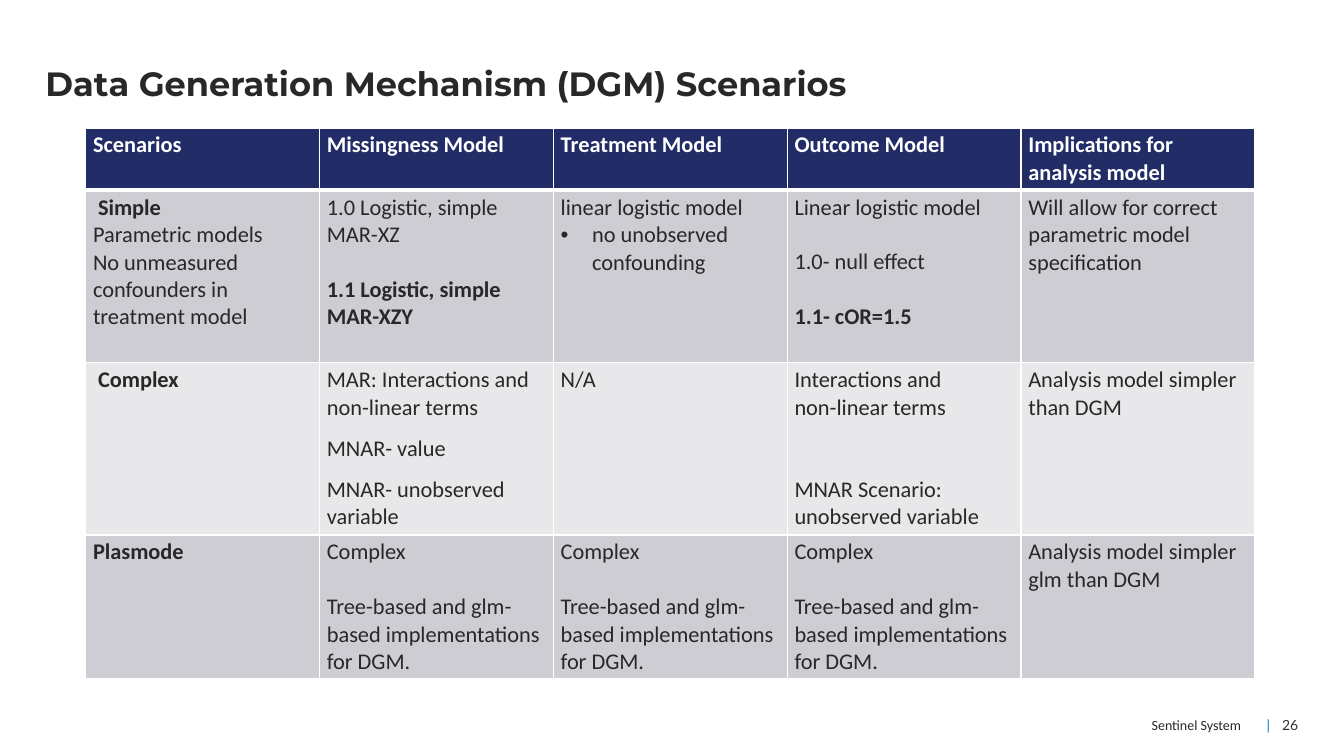
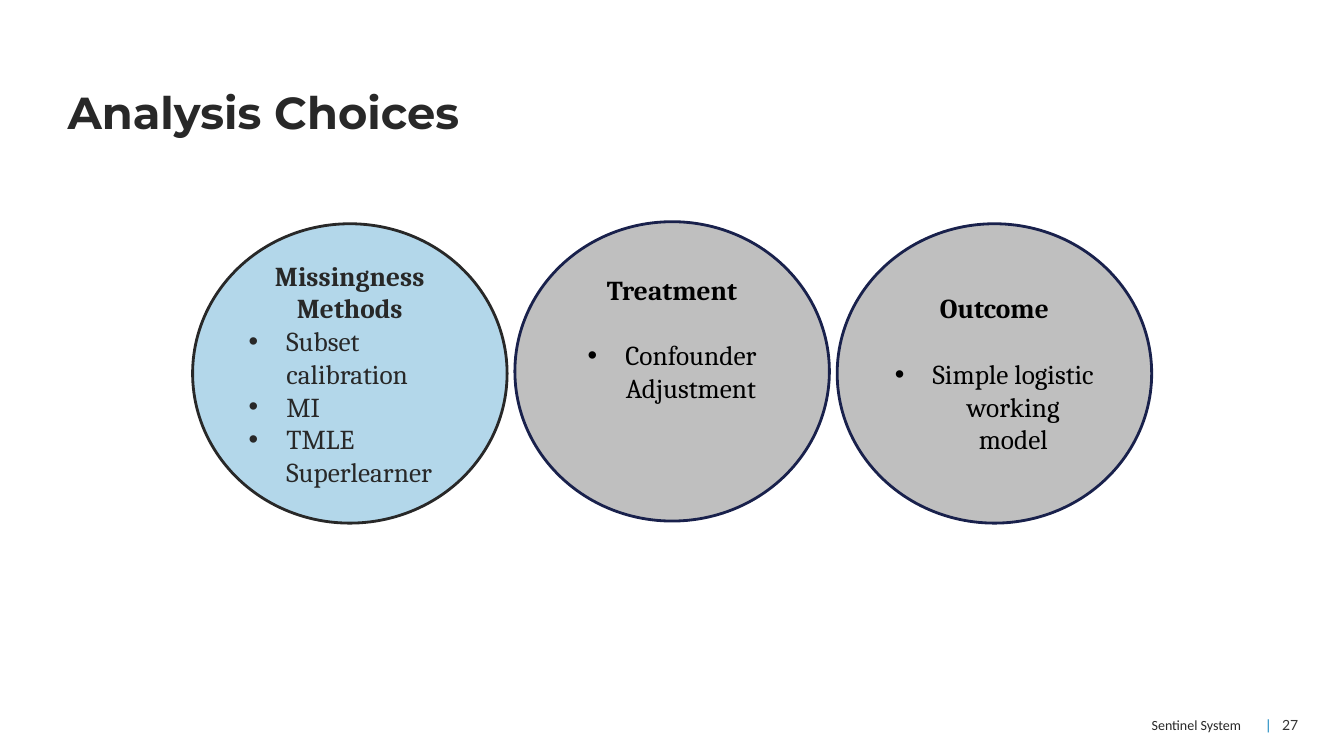
import dataclasses
import typing

import lxml.etree
import pptx
import pptx.dml.color
import pptx.enum.shapes
import pptx.enum.text
import pptx.oxml.ns
import pptx.slide
import pptx.text.text
import pptx.util

WIDTH, HEIGHT = pptx.util.Inches(13.333), pptx.util.Inches(7.5)
INK, WHITE, BLACK, NAVY = "282828", "FFFFFF", "000000", "222C67"
DARK_BAND, LIGHT_BAND = "CDCDD3", "E8E8EB"
ALIGN = pptx.enum.text.PP_ALIGN
ANCHOR = pptx.enum.text.MSO_ANCHOR
LINE_GAP, HALF_GAP = 19.5, 9.75
DISC_GAP = 23.4


class Box(typing.NamedTuple):
    """A frame in percent of the slide's width and height."""
    left: float
    top: float
    width: float
    height: float


class Type(typing.NamedTuple):
    font: str
    size: float
    colour: str


class Line(typing.NamedTuple):
    text: str
    bold: bool = False
    before: float = 0
    indent: float = 0
    align: typing.Optional[ALIGN] = None


@dataclasses.dataclass(frozen=True)
class Disc:
    fill: str
    outline: str
    ink: str
    top: float
    lines: list[Line]
    bottom_inset: float = 3.6


def across(percent: float) -> int:
    return pptx.util.Emu(round(WIDTH * percent / 100))


def down(percent: float) -> int:
    return pptx.util.Emu(round(HEIGHT * percent / 100))


def frame(box: Box) -> tuple[int, int, int, int]:
    return across(box.left), down(box.top), across(box.width), down(box.height)


def colour(value: str) -> pptx.dml.color.RGBColor:
    return pptx.dml.color.RGBColor.from_string(value)


def add_child(parent: lxml.etree._Element, tag: str, **attributes: str) -> lxml.etree._Element:
    return lxml.etree.SubElement(parent, pptx.oxml.ns.qn(tag), **attributes)


def add_run(paragraph: pptx.text.text._Paragraph, text: str, style: Type, bold: bool = False) -> None:
    run = paragraph.add_run()
    run.text = text
    run.font.name = style.font
    run.font.size = pptx.util.Pt(style.size)
    run.font.bold = bold
    run.font.color.rgb = colour(style.colour)


def add_bullet(paragraph: pptx.text.text._Paragraph, indent: float) -> None:
    properties = paragraph._p.get_or_add_pPr()
    distance = pptx.util.Pt(indent)
    properties.set("marL", str(distance))
    properties.set("indent", str(-distance))
    add_child(properties, "a:buFont", typeface="Arial")
    add_child(properties, "a:buChar", char="•")


def write_lines(text: pptx.text.text.TextFrame, lines: list[Line], style: Type) -> None:
    for index, line in enumerate(lines):
        paragraph = text.add_paragraph() if index else text.paragraphs[0]
        if line.indent:
            add_bullet(paragraph, line.indent)
        if line.before:
            paragraph.space_before = pptx.util.Pt(line.before)
        if line.align is not None:
            paragraph.alignment = line.align
        add_run(paragraph, line.text, style, line.bold)


def add_text(slide: pptx.slide.Slide, box: Box, anchor: ANCHOR, inset: float = 0,
             wrap: bool = True) -> pptx.text.text.TextFrame:
    text = slide.shapes.add_textbox(*frame(box)).text_frame
    text.word_wrap = wrap
    text.vertical_anchor = anchor
    text.margin_left = text.margin_right = 0
    text.margin_top = text.margin_bottom = pptx.util.Pt(inset)
    return text


def add_footer(slide: pptx.slide.Slide, number: int) -> None:
    owner = add_text(slide, Box(68.33, 93.47, 24, 4.93), ANCHOR.MIDDLE, 7.2)
    write_lines(owner, [Line("Sentinel System", align=ALIGN.RIGHT)], Type("Calibri", 10, INK))
    page = add_text(slide, Box(94.25, 93.47, 2.36, 4.93), ANCHOR.MIDDLE, 7.2, wrap=False)
    paragraph = page.paragraphs[0]
    paragraph.alignment = ALIGN.LEFT
    tabs = add_child(paragraph._p.get_or_add_pPr(), "a:tabLst")
    add_child(tabs, "a:tab", pos=str(across(1.15)), algn="l")
    add_run(paragraph, "|", Type("Lato", 10, "007CBA"))
    add_run(paragraph, f"\t{number}", Type("Lato", 10, "343434"))


def start_slide(deck: typing.Any, number: int, title: str, box: Box, size: float) -> pptx.slide.Slide:
    slide = deck.slides.add_slide(deck.slide_layouts[6])
    add_footer(slide, number)
    write_lines(add_text(slide, box, ANCHOR.BOTTOM), [Line(title, True)],
                Type("Montserrat", size, INK))
    return slide


def add_borders(cell: typing.Any, top: float, bottom: float) -> None:
    properties = cell._tc.get_or_add_tcPr()
    for side, points in (("L", 1), ("R", 1), ("T", top), ("B", bottom)):
        border = add_child(properties, f"a:ln{side}", w=str(pptx.util.Pt(points)))
        add_child(add_child(border, "a:solidFill"), "a:srgbClr", val=WHITE)


def add_scenarios(slide: pptx.slide.Slide, rows: list[list[list[Line]]], heights: list[float]) -> None:
    box = Box(6.38, 16.93, 87, sum(heights))
    table = slide.shapes.add_table(len(rows), len(rows[0]), *frame(box)).table
    for column in table.columns:
        column.width = across(box.width / len(rows[0]))
    for r, (row, height) in enumerate(zip(rows, heights)):
        table.rows[r].height = down(height)
        band = (DARK_BAND if r % 2 else LIGHT_BAND) if r else NAVY
        for c, lines in enumerate(row):
            cell = table.cell(r, c)
            cell.margin_left = cell.margin_right = pptx.util.Pt(5.2)
            cell.margin_top = cell.margin_bottom = pptx.util.Pt(2.6)
            add_borders(cell, 3 if r == 1 else 1, 1 if r else 3)
            cell.fill.solid()
            cell.fill.fore_color.rgb = colour(band)
            write_lines(cell.text_frame, lines, Type("Calibri", 16, INK if r else WHITE))


def add_disc(slide: pptx.slide.Slide, disc: Disc, position: int) -> None:
    box = Box(14.33 + 23.98 * position, disc.top, 23.4, 39.6)
    shape = slide.shapes.add_shape(pptx.enum.shapes.MSO_SHAPE.OVAL, *frame(box))
    shape.shadow.inherit = False
    shape.fill.solid()
    shape.fill.fore_color.rgb = colour(disc.fill)
    shape.line.color.rgb = colour(disc.outline)
    shape.line.width = pptx.util.Pt(2)
    text = shape.text_frame
    text.word_wrap = True
    text.vertical_anchor = ANCHOR.MIDDLE
    text.margin_bottom = pptx.util.Pt(disc.bottom_inset)
    write_lines(text, disc.lines, Type("Cambria", 19.5, disc.ink))


HEADINGS = ["Scenarios", "Missingness Model", "Treatment Model", "Outcome Model",
            "Implications for analysis model"]
PLASMODE = [Line("Complex"),
            Line("Tree-based and glm-based implementations for DGM.", before=LINE_GAP)]
SCENARIOS = [
    [[Line(heading, True)] for heading in HEADINGS],
    [
        [Line(" Simple", True), Line("Parametric models"),
         Line("No unmeasured confounders in treatment model")],
        [Line("1.0 Logistic, simple MAR-XZ"),
         Line("1.1 Logistic, simple MAR-XZY", True, LINE_GAP)],
        [Line("linear logistic model"), Line("no unobserved confounding", indent=22.5)],
        [Line("Linear logistic model"), Line("1.0- null effect", before=LINE_GAP),
         Line("1.1- cOR=1.5", True, LINE_GAP)],
        [Line("Will allow for correct parametric model specification")],
    ],
    [
        [Line(" Complex", True)],
        [Line("MAR: Interactions and"), Line("non-linear terms"),
         Line("MNAR- value", before=HALF_GAP),
         Line("MNAR- unobserved variable", before=HALF_GAP)],
        [Line("N/A")],
        [Line("Interactions and"), Line("non-linear terms"),
         Line("MNAR Scenario: unobserved variable", before=2 * LINE_GAP)],
        [Line("Analysis model simpler than DGM")],
    ],
    [[Line("Plasmode", True)], PLASMODE, PLASMODE, PLASMODE,
     [Line("Analysis model simpler glm than DGM")]],
]
METHODS = ["Subset calibration", "MI", "TMLE Superlearner"]
GREY, GREY_OUTLINE = "BFBFBF", "19214C"
DISCS = [
    Disc("B3D7EA", INK, INK, 29.6,
         [Line(word, True, align=ALIGN.CENTER) for word in ("Missingness", "Methods")]
         + [Line(method, indent=27, align=ALIGN.LEFT) for method in METHODS]),
    Disc(GREY, GREY_OUTLINE, BLACK, 29.33,
         [Line("Treatment", True, align=ALIGN.CENTER),
          Line("Confounder Adjustment", False, DISC_GAP, 27, ALIGN.CENTER)],
         3.6 + 2 * DISC_GAP),
    Disc(GREY, GREY_OUTLINE, BLACK, 29.6,
         [Line("Outcome", True, align=ALIGN.CENTER),
          Line("Simple logistic working model", False, DISC_GAP, 27, ALIGN.CENTER)]),
]


def main() -> None:
    deck = pptx.Presentation()
    deck.slide_width, deck.slide_height = WIDTH, HEIGHT
    scenarios = start_slide(deck, 26, "Data Generation Mechanism (DGM) Scenarios",
                            Box(3.38, 6.53, 82.43, 7.07), 24)
    add_scenarios(scenarios, SCENARIOS, [8.25, 22.8, 22.8, 19])
    choices = start_slide(deck, 27, "Analysis Choices", Box(5.03, 8.93, 91.58, 9.33), 32)
    for position, disc in enumerate(DISCS):
        add_disc(choices, disc, position)
    deck.save("out.pptx")


if __name__ == "__main__":
    main()
